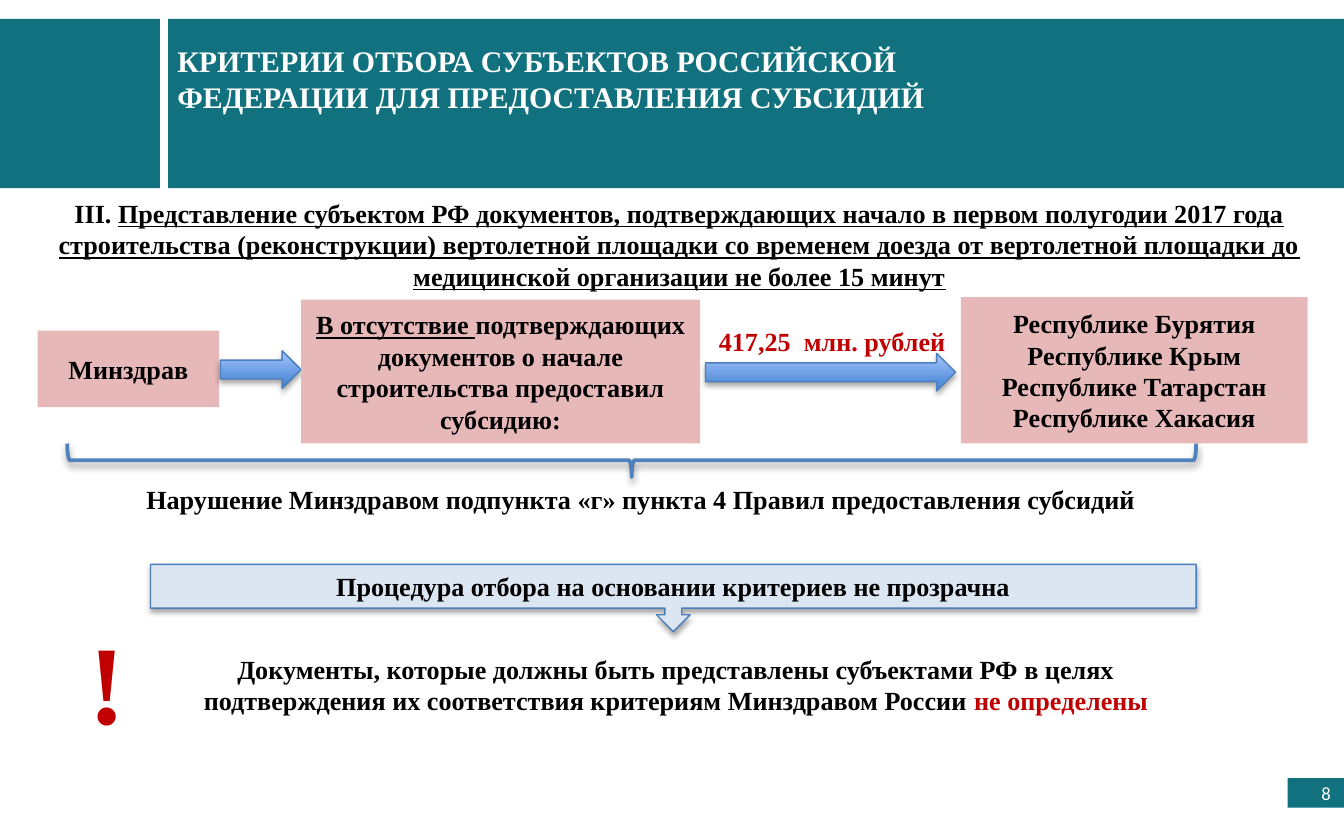
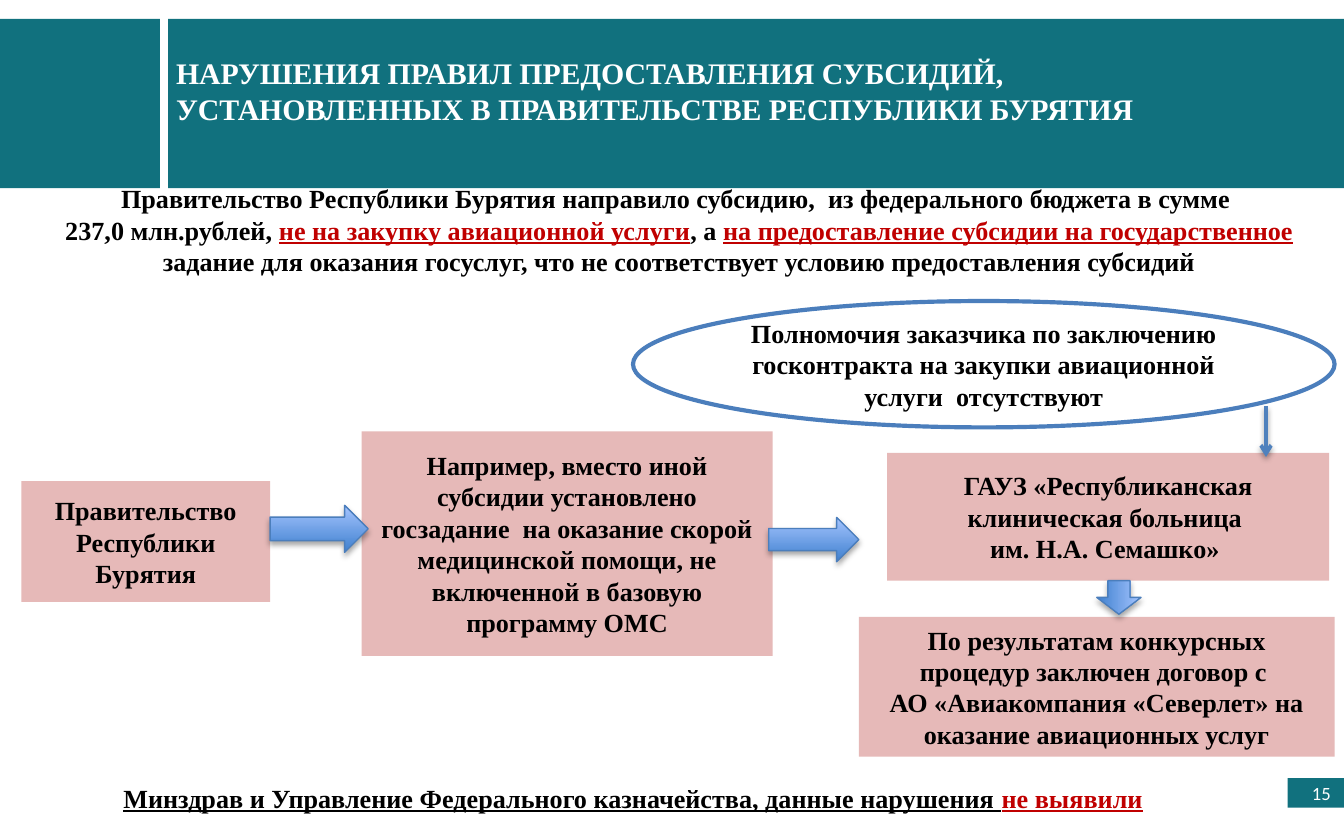
from copy import deepcopy
from dataclasses import dataclass

from lxml import etree
from pptx import Presentation
from pptx.dml.color import RGBColor
from pptx.enum.shapes import MSO_CONNECTOR, MSO_SHAPE
from pptx.enum.text import MSO_ANCHOR, MSO_AUTO_SIZE, PP_ALIGN
from pptx.oxml.ns import qn
from pptx.util import Inches, Pt

RECTANGLE, ELLIPSE = MSO_SHAPE.RECTANGLE, MSO_SHAPE.OVAL
RIGHT_ARROW, RIGHT_BRACE = MSO_SHAPE.RIGHT_ARROW, MSO_SHAPE.RIGHT_BRACE
CALLOUT = MSO_SHAPE.DOWN_ARROW_CALLOUT
STRAIGHT = MSO_CONNECTOR.STRAIGHT
LEFT, CENTER, RIGHT = PP_ALIGN.LEFT, PP_ALIGN.CENTER, PP_ALIGN.RIGHT
TOP, MIDDLE = MSO_ANCHOR.TOP, MSO_ANCHOR.MIDDLE
NO_AUTOFIT = MSO_AUTO_SIZE.NONE

COLORS = {
    "band": "11717E", "white": "FFFFFF", "text": "000000", "alert": "C00000",
    "step": "E6B9B8", "callout": "DCE6F2", "outline": "4B7EBC",
    "accent": "4F81BD", "arrow_dark": "3F80CE", "arrow_light": "A4C4FF",
}
SERIF, SANS = "Times New Roman", "Calibri"
SLIDE_WIDTH, SLIDE_HEIGHT = Inches(10), Inches(6.25)
CELL = SLIDE_WIDTH // 100  # square grid: 100 columns by 62.5 rows


@dataclass
class Box:
    """A region in grid columns and rows."""
    left: float
    top: float
    width: float
    height: float

    def area(self, left, top, width, height):
        return Box(self.left + left, self.top + top, width, height)

    def lengths(self):
        return [round(value * CELL) for value in
                (self.left, self.top, self.width, self.height)]


HEADER = Box(0, 1.4, 100, 12.6)
PAGE_NUMBER = Box(95.8, 57.9, 4.2, 2.2)


def color(name):
    return RGBColor.from_string(COLORS[name])


# Text: a paragraph is a string or a list of (text, color, underline) pieces
def write_text(frame, paragraphs, size=14, tint="text", align=CENTER,
               anchor=TOP, font=SERIF, bold=True, wrap=True):
    frame.word_wrap = wrap
    frame.auto_size = NO_AUTOFIT
    frame.vertical_anchor = anchor
    for index, pieces in enumerate(paragraphs):
        paragraph = frame.paragraphs[0] if index == 0 else frame.add_paragraph()
        paragraph.alignment = align
        if isinstance(pieces, str):
            pieces = [(pieces, tint, False)]
        for text, piece_color, underline in pieces:
            for number, line in enumerate(text.split("\n")):
                if number:
                    paragraph.add_line_break()
                run = paragraph.add_run()
                run.text = line
                run.font.name, run.font.size = font, Pt(size)
                run.font.bold, run.font.underline = bold, underline
                run.font.color.rgb = color(piece_color)
        # Line breaks take the size of the text around them
        for line_break in paragraph._p.findall(qn("a:br")):
            line_break.insert(0, deepcopy(run._r.rPr))


def add_label(slide, box, *paragraphs, **style):
    label = slide.shapes.add_textbox(*box.lengths())
    write_text(label.text_frame, paragraphs, **style)


def add_shadow(shape, alpha=35, distance=1.8):
    properties = shape._element.spPr
    effects = properties.find(qn("a:effectLst"))
    if effects is None:
        effects = etree.SubElement(properties, qn("a:effectLst"))
    shadow = etree.SubElement(
        effects, qn("a:outerShdw"), blurRad=str(Pt(3.1)),
        dist=str(Pt(distance)), dir="5400000", rotWithShape="0")
    tint = etree.SubElement(shadow, qn("a:srgbClr"), val=COLORS["text"])
    etree.SubElement(tint, qn("a:alpha"), val=str(alpha * 1000))


def add_figure(slide, kind, box, fill=None, line=None, line_width=0.75):
    shape = slide.shapes.add_shape(kind, *box.lengths())
    shape.shadow.inherit = False
    if fill:
        shape.fill.solid()
        shape.fill.fore_color.rgb = color(fill)
    else:
        shape.fill.background()
    if line:
        shape.line.color.rgb = color(line)
        shape.line.width = Pt(line_width)
    else:
        shape.line.fill.background()
    return shape


def add_step(slide, box, *paragraphs):
    step = add_figure(slide, RECTANGLE, box, "step")
    write_text(step.text_frame, paragraphs, anchor=MIDDLE)


def add_block_arrow(slide, box, rotation=0):
    arrow = add_figure(slide, RIGHT_ARROW, box, line="outline")
    arrow.rotation = rotation
    arrow.fill.gradient()
    arrow.fill.gradient_angle = 90
    for stop, name in zip(arrow.fill.gradient_stops, ("arrow_dark", "arrow_light")):
        stop.color.rgb = color(name)
    add_shadow(arrow)


# Bands, title and page number shared by the slides
def add_base_slide(presentation, title, title_area, page):
    slide = presentation.slides.add_slide(presentation.slide_layouts[5])
    for left, width in ((12.5, 87.5), (0, 11.9)):
        band = add_figure(slide, RECTANGLE,
                          HEADER.area(left, 0, width, HEADER.height), "band")
        slide.shapes._spTree.insert(2, band._element)  # behind the title
    number = add_figure(slide, RECTANGLE, PAGE_NUMBER, "band")
    write_text(number.text_frame, [page], 10, "white", RIGHT, MIDDLE, SANS, False)
    heading = slide.shapes.title
    heading.left, heading.top, heading.width, heading.height = (
        HEADER.area(*title_area).lengths())
    write_text(heading.text_frame, [title], 16, "white", LEFT)
    return slide


# Slide 1: who received the subsidy without documents
def add_subsidy_flow(slide, box):
    add_step(slide, box.area(0, 2.5, 13.5, 5.7), "Минздрав")
    add_block_arrow(slide, box.area(13.6, 4, 6, 2.8))
    add_step(slide, box.area(19.6, 0.2, 29.7, 10.7), [
        ("В отсутствие ", "text", True),
        ("подтверждающих документов о начале строительства предоставил субсидию:",
         "text", False)])
    add_block_arrow(slide, box.area(49.7, 4.2, 18.6, 2.8))
    regions = ("Бурятия", "Крым", "Татарстан", "Хакасия")
    add_step(slide, box.area(68.7, 0, 25.8, box.height),
             *(f"Республике {region}" for region in regions))
    add_label(slide, box.area(49.7, 1.6, 19, 3.4), "417,25  млн. рублей",
              tint="alert", align=LEFT, wrap=False)


def add_violation(slide, box):
    # The brace is drawn upright and turned about its centre
    length, depth = 84, 2.5
    brace = add_figure(
        slide, RIGHT_BRACE,
        box.area(0.2 + (length - depth) / 2, (depth - length) / 2, depth, length),
        line="accent", line_width=2)
    brace.rotation = 90
    add_shadow(brace, 38, 1.6)
    add_label(slide, box.area(0, 2.5, box.width, 3.4),
              "Нарушение Минздравом подпункта «г» пункта 4 Правил предоставления субсидий")


def add_conclusion(slide, box):
    add_label(slide, box.area(0, 3.1, 4.8, 11.1), "!",
              size=60, tint="alert", align=LEFT, wrap=False)
    add_label(slide, box.area(4.9, 6.1, 79.6, 5.7), [
        ("Документы, которые должны быть представлены субъектами РФ в целях "
         "подтверждения их соответствия критериям Минздравом России ", "text", False),
        ("не определены", "alert", False)])
    callout = add_figure(slide, CALLOUT, box.area(5.6, 0, 77.8, 5),
                         "callout", "outline")
    add_shadow(callout)
    write_text(callout.text_frame,
               ["Процедура отбора на основании критериев не прозрачна"], anchor=MIDDLE)


def build_criteria_slide(presentation):
    slide = add_base_slide(
        presentation,
        "КРИТЕРИИ ОТБОРА СУБЪЕКТОВ РОССИЙСКОЙ ФЕДЕРАЦИИ ДЛЯ ПРЕДОСТАВЛЕНИЯ СУБСИДИЙ",
        (12.2, 1.3, 58.1, 6.4), "8")
    add_label(slide, Box(1.1, 14.2, 98.9, 8.1), [
        ("III. ", "text", False),
        ("Представление субъектом РФ документов, подтверждающих начало в первом "
         "полугодии 2017 года строительства (реконструкции) вертолетной площадки "
         "со временем доезда от вертолетной площадки до медицинской организации "
         "не более 15 минут", "text", True)])
    add_subsidy_flow(slide, Box(2.8, 22.1, 94.5, 10.9))
    add_violation(slide, Box(4.8, 33, 85.8, 5.9))
    add_conclusion(slide, Box(5.6, 42, 84.5, 14.2))


# Slide 2: how the money moved in the region
def add_money_flow(slide, box):
    add_step(slide, box.area(0, 13.4, 18.5, 9), "Правительство Республики Бурятия")
    add_step(slide, box.area(25.3, 9.7, 30.6, 16.7),
             "Например, вместо иной субсидии установлено госзадание  на оказание "
             "скорой медицинской помощи, не включенной в базовую программу ОМС")
    add_step(slide, box.area(64.4, 11.3, 32.9, 9.5),
             "ГАУЗ «Республиканская клиническая больница \nим. Н.А. Семашко» ")
    add_block_arrow(slide, box.area(18.5, 15.2, 7.3, 3.5))
    add_block_arrow(slide, box.area(55.6, 16.1, 6.7, 3.3))
    add_step(slide, box.area(62.3, 23.5, 35.4, 10.4),
             "По результатам конкурсных процедур заключен договор с \n"
             "АО «Авиакомпания «Северлет» на оказание авиационных услуг")
    add_block_arrow(slide, box.area(80.4, 20.4, 2.5, 3.3), rotation=90)


def add_authority_note(slide, box):
    pointer_x, start, end = box.left + 47.1, box.top + 7.8, box.top + 11.6
    pointer = slide.shapes.add_connector(
        STRAIGHT, *(round(value * CELL) for value in (pointer_x, start, pointer_x, end)))
    pointer.line.color.rgb = color("accent")
    pointer.line.width = Pt(2)
    etree.SubElement(pointer.line._get_or_add_ln(), qn("a:tailEnd"), type="arrow")
    add_shadow(pointer, 38, 1.6)
    note = add_figure(slide, ELLIPSE, box, line="outline", line_width=2.25)
    write_text(note.text_frame,
               ["Полномочия заказчика по заключению госконтракта на закупки "
                "авиационной услуги  отсутствуют"], anchor=MIDDLE)


def build_violations_slide(presentation):
    slide = add_base_slide(
        presentation,
        "НАРУШЕНИЯ ПРАВИЛ ПРЕДОСТАВЛЕНИЯ СУБСИДИЙ, УСТАНОВЛЕННЫХ В ПРАВИТЕЛЬСТВЕ "
        "РЕСПУБЛИКИ БУРЯТИЯ",
        (12.1, 2.2, 74, 6.4), "15")
    add_label(slide, Box(2.1, 13.1, 96.9, 8.1), [
        ("Правительство Республики Бурятия направило субсидию,  из федерального "
         "бюджета в сумме \n237,0 млн.рублей, ", "text", False),
        ("не на закупку авиационной услуги", "alert", True),
        (", а ", "text", False),
        ("на предоставление субсидии на государственное ", "alert", True),
        ("задание для оказания госуслуг, что не соответствует условию "
         "предоставления субсидий", "text", False)])
    add_money_flow(slide, Box(1.6, 22.4, 97.7, 33.9))
    add_authority_note(slide, Box(47.1, 22.4, 52.2, 9.4))
    add_label(slide, Box(1.4, 57.7, 91.4, 3.4), [
        ("Минздрав и Управление Федерального казначейства, данные нарушения ",
         "text", True),
        ("не выявили", "alert", True)])


def main():
    presentation = Presentation()
    presentation.slide_width = SLIDE_WIDTH
    presentation.slide_height = SLIDE_HEIGHT
    build_criteria_slide(presentation)
    build_violations_slide(presentation)
    presentation.save("out.pptx")


if __name__ == "__main__":
    main()
